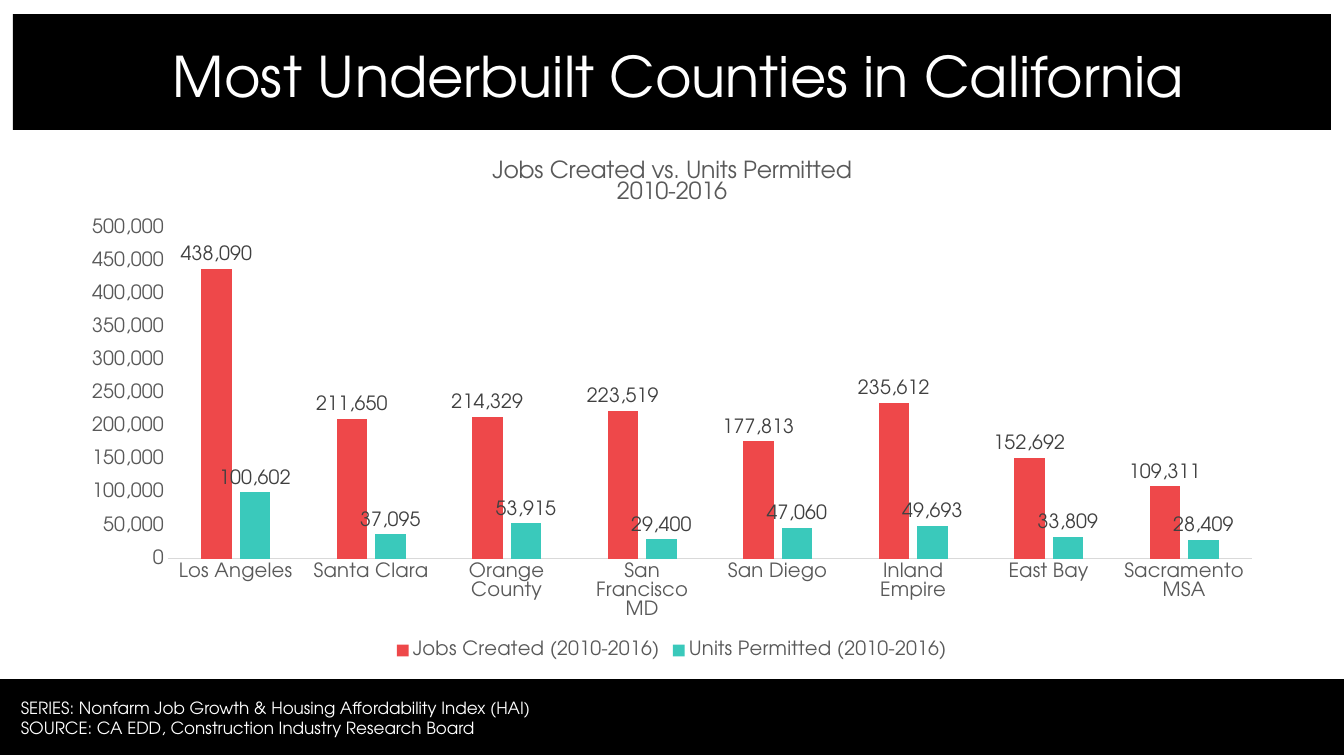
from lxml.etree import SubElement
from pptx import Presentation
from pptx.chart.data import CategoryChartData
from pptx.dml.color import RGBColor
from pptx.enum.chart import (XL_CHART_TYPE as ChartType, XL_LABEL_POSITION as LabelPos,
                             XL_LEGEND_POSITION as LegendPos, XL_TICK_MARK as Tick)
from pptx.enum.shapes import MSO_SHAPE as Shape
from pptx.enum.text import MSO_ANCHOR as Anchor
from pptx.oxml.ns import qn
from pptx.util import Emu, Pt

# Content
TITLE = "Most Underbuilt Counties in California"
NOTES = ["SERIES: Nonfarm Job Growth & Housing Affordability Index (HAI)",
         "SOURCE: CA EDD, Construction Industry Research Board"]
CHART_TITLE = ["Jobs Created vs. Units Permitted", "2010-2016"]
SERIES = ["Jobs Created (2010-2016)", "Units Permitted (2010-2016)"]
COUNTIES = [
    ("Los Angeles", 438090, 100602),
    ("Santa Clara", 211650, 37095),
    ("Orange County", 214329, 53915),
    ("San Francisco MD", 223519, 29400),
    ("San Diego", 177813, 47060),
    ("Inland Empire", 235612, 49693),
    ("East Bay", 152692, 33809),
    ("Sacramento MSA", 109311, 28409),
]

# Style
FONT = "TeX Gyre Adventor"
NUMBER = "#,##0"
BLACK = RGBColor(0x00, 0x00, 0x00)
WHITE = RGBColor(0xFF, 0xFF, 0xFF)
GREY = RGBColor(0x59, 0x59, 0x59)
DARK_GREY = RGBColor(0x40, 0x40, 0x40)
LIGHT_GREY = RGBColor(0xD9, 0xD9, 0xD9)
RED = RGBColor(0xEE, 0x48, 0x4A)
TEAL = RGBColor(0x3A, 0xC9, 0xBB)

# Places in px: left, top, width, height
SLIDE = (1344, 756)
BANDS = [(0, 679, 1344, 76), (13, 14, 1318, 116)]
TITLE_BOX = (163, 45, 1146, 68)
NOTES_BOX = (11, 693, 539, 50)
CHART_BOX = (68, 141, 1208, 523)
PLOT_BOX = (168, 228, 1084, 331)


def px(n):
    return Emu(round(n * 914400 / 100.8))


def style(font, size, color):
    for name, value in {"name": FONT, "size": Pt(size), "bold": False}.items():
        setattr(font, name, value)
    font.color.rgb = color


def write(tf, lines, size, color, spacing=None):
    for i, line in enumerate(lines):
        p = tf.paragraphs[0] if i == 0 else tf.add_paragraph()
        if spacing:
            p.line_spacing = spacing
        r = p.add_run()
        r.text = line
        style(r.font, size, color)


def add_text(s, box, lines, size, anchor, wrap, spacing=None):
    tf = s.shapes.add_textbox(*map(px, box)).text_frame
    tf.word_wrap = wrap
    tf.vertical_anchor = anchor
    write(tf, lines, size, WHITE, spacing)


prs = Presentation()
prs.slide_width, prs.slide_height = map(px, SLIDE)
s = prs.slides.add_slide(prs.slide_layouts[6])

# Black bands
for box in BANDS:
    sp = s.shapes.add_shape(Shape.RECTANGLE, *map(px, box))
    sp.shadow.inherit = False
    sp.fill.solid()
    sp.fill.fore_color.rgb = BLACK
    sp.line.fill.background()

# Title and source notes
add_text(s, TITLE_BOX, [TITLE], 40, Anchor.MIDDLE, True, 0.9)
add_text(s, NOTES_BOX, NOTES, 12, Anchor.TOP, False)

# Chart
names, *columns = zip(*COUNTIES)
data = CategoryChartData(number_format=NUMBER)
data.categories = names
for name, values in zip(SERIES, columns):
    data.add_series(name, values)
chart = s.shapes.add_chart(ChartType.COLUMN_CLUSTERED, *map(px, CHART_BOX), data).chart
style(chart.font, 14, BLACK)
chart.has_title = True
write(chart.chart_title.text_frame, CHART_TITLE, 16.8, GREY)
chart.chart_title.include_in_layout = False
chart.has_legend = True
chart.legend.position = LegendPos.BOTTOM
chart.legend.include_in_layout = False
style(chart.legend.font, 14, GREY)

# Axes
for axis in (chart.category_axis, chart.value_axis):
    axis.major_tick_mark = axis.minor_tick_mark = Tick.NONE
    axis.has_major_gridlines = False
    style(axis.tick_labels.font, 14, GREY)
chart.category_axis.format.line.color.rgb = LIGHT_GREY
chart.category_axis.format.line.width = Pt(0.75)
values_axis = chart.value_axis
values_axis.format.line.fill.background()
values_axis.minimum_scale, values_axis.maximum_scale = 0, 500000
values_axis.major_unit = 50000
values_axis.tick_labels.number_format = NUMBER
values_axis.tick_labels.number_format_is_linked = False

# Columns and their labels
plot = chart.plots[0]
plot.gap_width, plot.overlap, plot.vary_by_categories = 219, -27, False
for series, color in zip(plot.series, (RED, TEAL)):
    series.format.fill.solid()
    series.format.fill.fore_color.rgb = color
    series.invert_if_negative = False
    labels = series.data_labels
    for name, value in {"show_value": True, "number_format": NUMBER,
                        "number_format_is_linked": False,
                        "position": LabelPos.OUTSIDE_END}.items():
        setattr(labels, name, value)
    style(labels.font, 14, DARK_GREY)

# Plot area placed as fractions of the chart
area = chart.element.find(".//" + qn("c:plotArea"))
layout = area.find(qn("c:layout"))
if layout is None:
    layout = SubElement(area, qn("c:layout"))
    area.insert(0, layout)
left, top, width, height = CHART_BOX
x, y, w, h = PLOT_BOX
manual = SubElement(layout, qn("c:manualLayout"))
for tag, value in {"layoutTarget": "inner", "xMode": "edge", "yMode": "edge",
                   "x": (x - left) / width, "y": (y - top) / height,
                   "w": w / width, "h": h / height}.items():
    SubElement(manual, qn("c:" + tag)).set("val", str(value))

prs.save("out.pptx")
